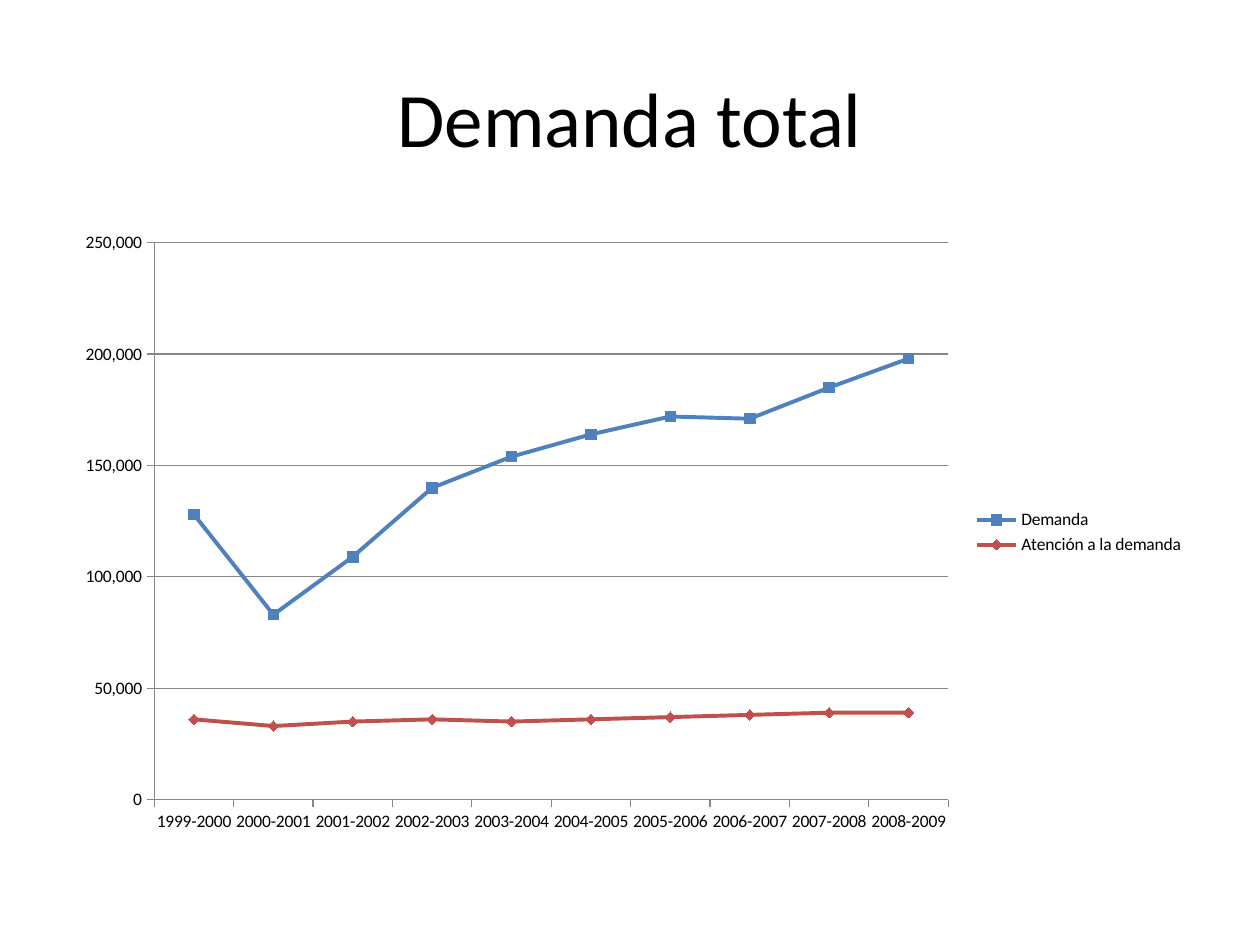
from pptx import Presentation
from pptx.chart.data import CategoryChartData
from pptx.dml.color import RGBColor
from pptx.enum.chart import XL_CHART_TYPE, XL_LEGEND_POSITION, XL_MARKER_STYLE, XL_TICK_MARK
from pptx.enum.text import MSO_ANCHOR, PP_ALIGN
from pptx.util import Inches, Pt

LINE_MARKERS = XL_CHART_TYPE.LINE_MARKERS
LEGEND_RIGHT = XL_LEGEND_POSITION.RIGHT
SQUARE, DIAMOND = XL_MARKER_STYLE.SQUARE, XL_MARKER_STYLE.DIAMOND
OUTSIDE = XL_TICK_MARK.OUTSIDE
MIDDLE, CENTER = MSO_ANCHOR.MIDDLE, PP_ALIGN.CENTER

BLACK = RGBColor(0x00, 0x00, 0x00)
GRAY = RGBColor(0x86, 0x86, 0x86)
BLUE = RGBColor(0x4F, 0x81, 0xBD)
RED = RGBColor(0xC0, 0x50, 0x4D)

WIDTH, HEIGHT = Inches(10), Inches(7.5)
MARGIN = 0.05
TITLE_FONT = {"name": "Calibri", "size": Pt(44)}
CHART_FONT = {"name": "Calibri", "size": Pt(10)}

YEARS = [f"{year}-{year + 1}" for year in range(1999, 2009)]
SERIES = [
    ("Demanda", BLUE, SQUARE,
     [128000, 83000, 109000, 140000, 154000, 164000, 172000, 171000, 185000, 198000]),
    ("Atención a la demanda", RED, DIAMOND,
     [36000, 33000, 35000, 36000, 35000, 36000, 37000, 38000, 39000, 39000]),
]


def band(top, height):
    """Return left, top, width, height of a band between the side margins."""
    return (int(WIDTH * MARGIN), int(HEIGHT * top),
            int(WIDTH * (1 - 2 * MARGIN)), int(HEIGHT * height))


def format_font(font, values):
    for name, value in values.items():
        setattr(font, name, value)
    font.color.rgb = BLACK


def add_title(s, text, box):
    title = s.shapes.title
    title.left, title.top, title.width, title.height = box
    tf = title.text_frame
    tf.text = text
    tf.vertical_anchor = MIDDLE
    p = tf.paragraphs[0]
    p.alignment = CENTER
    format_font(p.runs[0].font, TITLE_FONT)


def format_axis(axis):
    axis.major_tick_mark = OUTSIDE
    axis.format.line.color.rgb = GRAY
    axis.format.line.width = Pt(0.75)


def format_series(series, color, marker):
    series.smooth = False
    series.format.line.color.rgb = color
    series.format.line.width = Pt(2.25)
    series.marker.style = marker
    series.marker.size = 6
    series.marker.format.fill.solid()
    series.marker.format.fill.fore_color.rgb = color
    series.marker.format.line.color.rgb = color


def add_demand_chart(s, box):
    data = CategoryChartData(number_format="#,##0")
    data.categories = YEARS
    for name, _, _, values in SERIES:
        data.add_series(name, values)
    chart = s.shapes.add_chart(LINE_MARKERS, *box, data).chart
    chart.has_title = False
    format_font(chart.font, CHART_FONT)
    chart.has_legend = True
    chart.legend.position = LEGEND_RIGHT
    chart.legend.include_in_layout = False

    for axis in (chart.category_axis, chart.value_axis):
        format_axis(axis)
    values_axis = chart.value_axis
    values_axis.minimum_scale, values_axis.maximum_scale = 0, 250000
    values_axis.major_unit = 50000
    values_axis.tick_labels.number_format = "#,##0"
    values_axis.tick_labels.number_format_is_linked = False
    values_axis.major_gridlines.format.line.color.rgb = GRAY
    values_axis.major_gridlines.format.line.width = Pt(0.75)

    chart.plots[0].vary_by_categories = False
    for series, (_, color, marker, _) in zip(chart.plots[0].series, SERIES):
        format_series(series, color, marker)


def main():
    prs = Presentation()
    prs.slide_width, prs.slide_height = WIDTH, HEIGHT
    s = prs.slides.add_slide(prs.slide_layouts[5])
    add_title(s, "Demanda total", band(0.04, 1 / 6))
    add_demand_chart(s, band(7 / 30, 0.66))
    prs.save("out.pptx")


if __name__ == "__main__":
    main()
